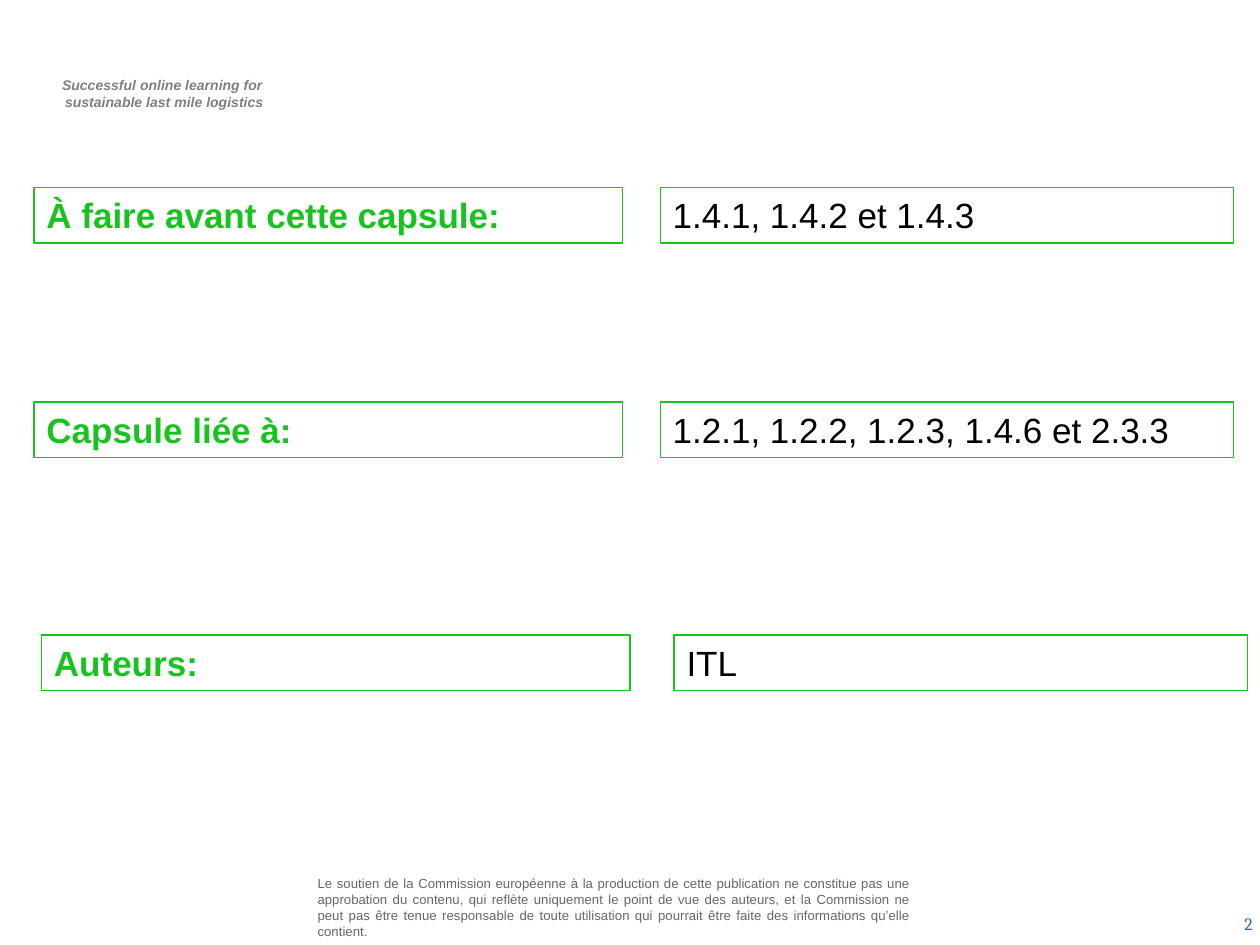
from pptx import Presentation, util as u
from pptx.dml.color import RGBColor
from pptx.enum import shapes, text

WIDTH, HEIGHT = u.Inches(10), u.Inches(7.5)
GREEN, BLACK, WHITE = "18C320", "000000", "FFFFFF"
LABEL_WIDTH, VALUE_WIDTH, ROW_HEIGHT = 4.67, 4.55, 0.44

# Each row: top, label left, value left, label, value
ROWS = [
    (1.49, 0.27, 5.24, "À faire avant cette capsule:", "1.4.1, 1.4.2 et 1.4.3"),
    (3.19, 0.27, 5.24, "Capsule liée à:", "1.2.1, 1.2.2, 1.2.3, 1.4.6 et 2.3.3"),
    (5.04, 0.33, 5.35, "Auteurs:", "ITL"),
]
TAGLINE = ["Successful online learning for ", "sustainable last mile logistics"]
DISCLAIMER = (
    "Le soutien de la Commission européenne à la production de cette publication "
    "ne constitue pas une approbation du contenu, qui reflète uniquement le point "
    "de vue des auteurs, et la Commission ne peut pas être tenue responsable de "
    "toute utilisation qui pourrait être faite des informations qu’elle contient."
)


def color(hex_code):
    return RGBColor.from_string(hex_code)


def place(left, top, width, height):
    return [u.Inches(length) for length in (left, top, width, height)]


def write(shape, lines, size, hex_code, font="Arial", bold=False, italic=False,
          align=text.PP_ALIGN.LEFT, anchor=text.MSO_ANCHOR.TOP, insets=(0.1, 0.05)):
    frame = shape.text_frame
    frame.word_wrap = True
    frame.vertical_anchor = anchor
    frame.margin_left = frame.margin_right = u.Inches(insets[0])
    frame.margin_top = frame.margin_bottom = u.Inches(insets[1])
    for index, line in enumerate(lines):
        paragraph = frame.add_paragraph() if index else frame.paragraphs[0]
        paragraph.alignment = align
        run = paragraph.add_run()
        run.text = line
        run.font.name, run.font.size = font, u.Pt(size)
        run.font.bold, run.font.italic = bold, italic
        run.font.color.rgb = color(hex_code)


def add_text(slide, box, lines, size, hex_code, **style):
    write(slide.shapes.add_textbox(*place(*box)), lines, size, hex_code, **style)


def add_field(slide, box, line, hex_code, bold=False):
    shape = slide.shapes.add_shape(shapes.MSO_SHAPE.RECTANGLE, *place(*box))
    shape.shadow.inherit = False
    shape.fill.solid()
    shape.fill.fore_color.rgb = color(WHITE)
    shape.line.color.rgb = color(GREEN)
    shape.line.width = u.Pt(0.75)
    write(shape, [line], 20, hex_code, bold=bold)


def main():
    presentation = Presentation()
    presentation.slide_width, presentation.slide_height = WIDTH, HEIGHT
    slide = presentation.slides.add_slide(presentation.slide_layouts[6])

    # Header, disclaimer and page number
    add_text(slide, (0.29, 0.56, 2.03, 0.37), TAGLINE, 8, "7F7F7F",
             bold=True, italic=True, align=text.PP_ALIGN.CENTER)
    add_text(slide, (2.48, 6.95, 4.78, 0.5), [DISCLAIMER], 7.5, "666666",
             align=text.PP_ALIGN.JUSTIFY, anchor=text.MSO_ANCHOR.MIDDLE,
             insets=(0.04, 0.04))
    add_text(slide, (7.71, 7.13, 2.33, 0.4), ["2"], 10, "3366CC", font="Cambria",
             align=text.PP_ALIGN.RIGHT, anchor=text.MSO_ANCHOR.MIDDLE)

    # Label and value rows
    for top, label_left, value_left, label, value in ROWS:
        add_field(slide, (label_left, top, LABEL_WIDTH, ROW_HEIGHT), label, GREEN, bold=True)
        add_field(slide, (value_left, top, VALUE_WIDTH, ROW_HEIGHT), value, BLACK)

    presentation.save("out.pptx")


if __name__ == "__main__":
    main()
